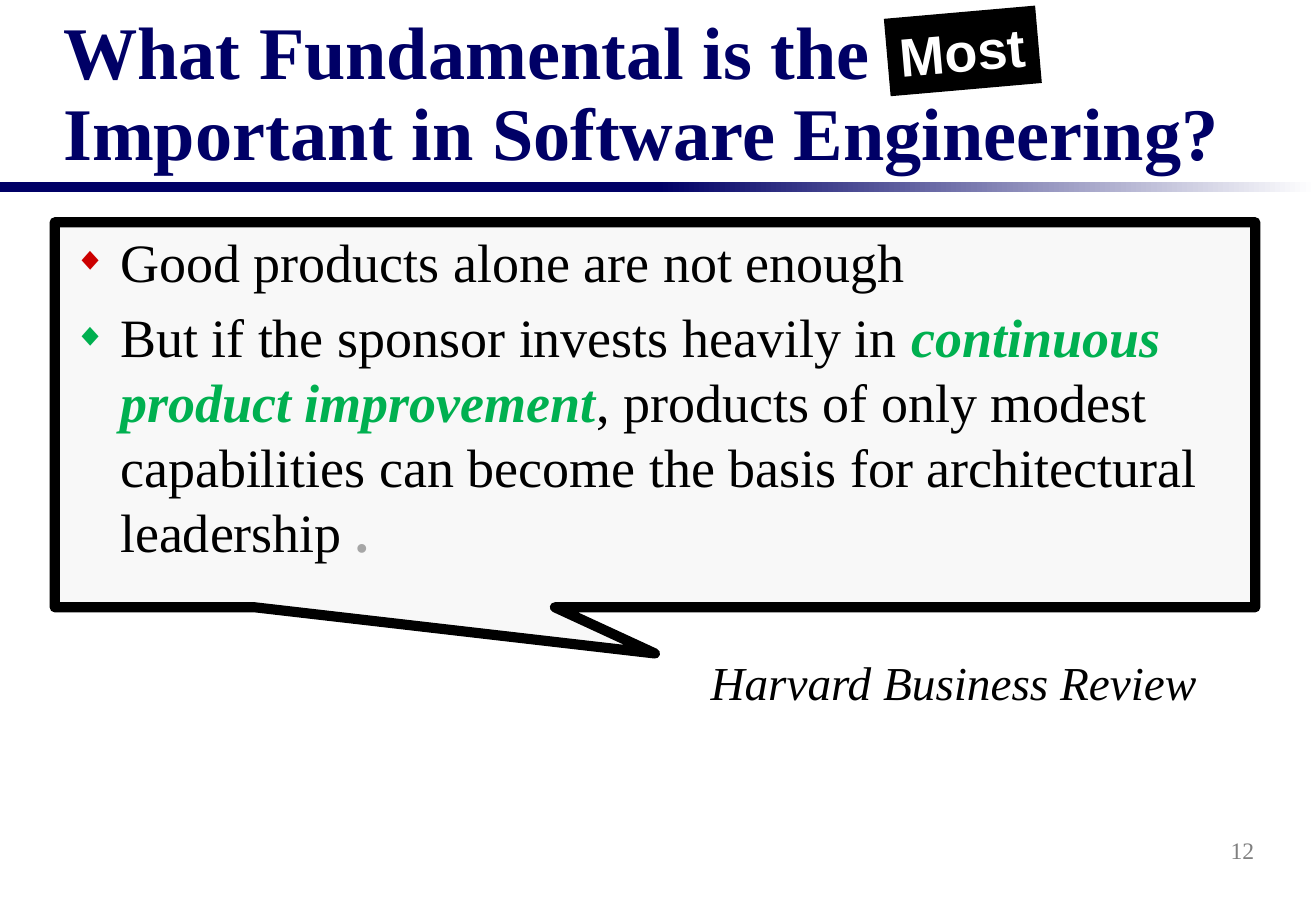
from lxml import etree
from pptx import Presentation
from pptx.dml.color import RGBColor
from pptx.enum.shapes import MSO_SHAPE
from pptx.enum.text import MSO_ANCHOR, PP_ALIGN
from pptx.oxml.ns import qn
from pptx.util import Inches, Pt

RECTANGLE = MSO_SHAPE.RECTANGLE
CALLOUT = MSO_SHAPE.RECTANGULAR_CALLOUT
TOP, MIDDLE, BOTTOM = MSO_ANCHOR.TOP, MSO_ANCHOR.MIDDLE, MSO_ANCHOR.BOTTOM
LEFT, RIGHT = PP_ALIGN.LEFT, PP_ALIGN.RIGHT
TITLE_ONLY = 5
NAVY, BLACK, WHITE = "000066", "000000", "FFFFFF"
GREEN, RED, GREY = "00B050", "CC0000", "A6A6A6"


def color(value):
    return RGBColor.from_string(value)


def add_text(paragraph, text, size=32, font="Times New Roman", fill=BLACK, bold=False, italic=False):
    run = paragraph.add_run()
    run.text = text
    run.font.size = Pt(size)
    run.font.name = font
    run.font.color.rgb = color(fill)
    run.font.bold = bold
    run.font.italic = italic


class SlideBuilder:
    def __init__(self, width, height):
        self.presentation = Presentation()
        self.presentation.slide_width = Inches(width)
        self.presentation.slide_height = Inches(height)
        self.slide = self.presentation.slides.add_slide(self.presentation.slide_layouts[TITLE_ONLY])

    def box(self, left, top, width, height):
        across = self.presentation.slide_width / 100
        down = self.presentation.slide_height / 100
        return int(left * across), int(top * down), int(width * across), int(height * down)

    def frame(self, shape, anchor=TOP, wrap=True, align=LEFT):
        frame = shape.text_frame
        frame.word_wrap = wrap
        frame.vertical_anchor = anchor
        frame.paragraphs[0].alignment = align
        return frame

    def title(self, text, box, **style):
        shape = self.slide.shapes.title
        shape.left, shape.top, shape.width, shape.height = self.box(*box)
        paragraph = self.frame(shape, BOTTOM).paragraphs[0]
        paragraph.line_spacing = 0.9
        first, *others = text.split("\n")
        add_text(paragraph, first, **style)
        for line in others:
            paragraph.add_line_break()
            add_text(paragraph, line, **style)

    def shape(self, kind, box, fill, fade=None, line=None, line_width=0, rotation=0):
        shape = self.slide.shapes.add_shape(kind, *self.box(*box))
        shape.shadow.inherit = False
        shape.rotation = rotation
        if fade:
            shape.fill.gradient()
            shape.fill.gradient_angle = 0
            for stop, value in zip(shape.fill.gradient_stops, (fill, fade)):
                stop.color.rgb = color(value)
        else:
            shape.fill.solid()
            shape.fill.fore_color.rgb = color(fill)
        if line:
            shape.line.color.rgb = color(line)
            shape.line.width = Pt(line_width)
        else:
            shape.line.fill.background()
        return shape

    def label(self, text, box, anchor=TOP, align=LEFT, **style):
        shape = self.slide.shapes.add_textbox(*self.box(*box))
        add_text(self.frame(shape, anchor, False, align).paragraphs[0], text, **style)

    def bullet(self, paragraph, fill, runs):
        properties = paragraph._p.get_or_add_pPr()
        properties.set("marL", str(Inches(0.44)))
        properties.set("indent", str(Inches(-0.38)))
        bullet_color = etree.SubElement(properties, qn("a:buClr"))
        etree.SubElement(bullet_color, qn("a:srgbClr"), val=fill)
        etree.SubElement(properties, qn("a:buSzPct"), val="60000")
        etree.SubElement(properties, qn("a:buFont"), typeface="Arial")
        etree.SubElement(properties, qn("a:buChar"), char="◆")
        for text, style in runs:
            add_text(paragraph, text, **style)

    def callout(self, box, tip, bullets, **style):
        shape = self.shape(CALLOUT, box, **style)
        shape.adjustments[0], shape.adjustments[1] = tip
        frame = self.frame(shape)
        for index, (fill, runs) in enumerate(bullets):
            paragraph = frame.add_paragraph() if index else frame.paragraphs[0]
            paragraph.alignment = LEFT
            if index:
                paragraph.space_before = Pt(6.4)
            self.bullet(paragraph, fill, runs)


def main():
    builder = SlideBuilder(10.83, 7.5)
    builder.shape(RECTANGLE, (0, 20, 50, 1.07), NAVY)
    builder.shape(RECTANGLE, (50, 20, 50, 1.07), NAVY, fade=WHITE)
    builder.label("12", (75.35, 90, 20.87, 6.67), MIDDLE, RIGHT, size=14, fill="808080")
    emphasis = {"fill": GREEN, "bold": True, "italic": True}
    bullets = [
        (RED, [("Good products alone are not enough", {})]),
        (GREEN, [
            ("But if the sponsor invests heavily in ", {}),
            ("continuous product improvement", emphasis),
            (", products of only modest capabilities can become the basis for architectural leadership", {}),
            (" .", {"fill": GREY, "bold": True}),
        ]),
    ]
    builder.callout((4.16, 24.4, 91.23, 42.27), (0, 0.62), bullets, fill="F8F8F8", line=BLACK, line_width=6)
    builder.title("What Fundamental is the\nImportant in Software Engineering?",
                  (3.88, 3.87, 92.34, 16.13), size=44, fill=NAVY, bold=True)
    builder.label("Harvard Business Review", (53.09, 71.07, 38.87, 7.6), size=28, italic=True)
    badge = builder.shape(RECTANGLE, (67.4, 1.33, 11.54, 8.53), BLACK, rotation=355)
    add_text(builder.frame(badge, wrap=False).paragraphs[0], "Most", font="Arial", fill=WHITE, bold=True)
    builder.presentation.save("out.pptx")


if __name__ == "__main__":
    main()
